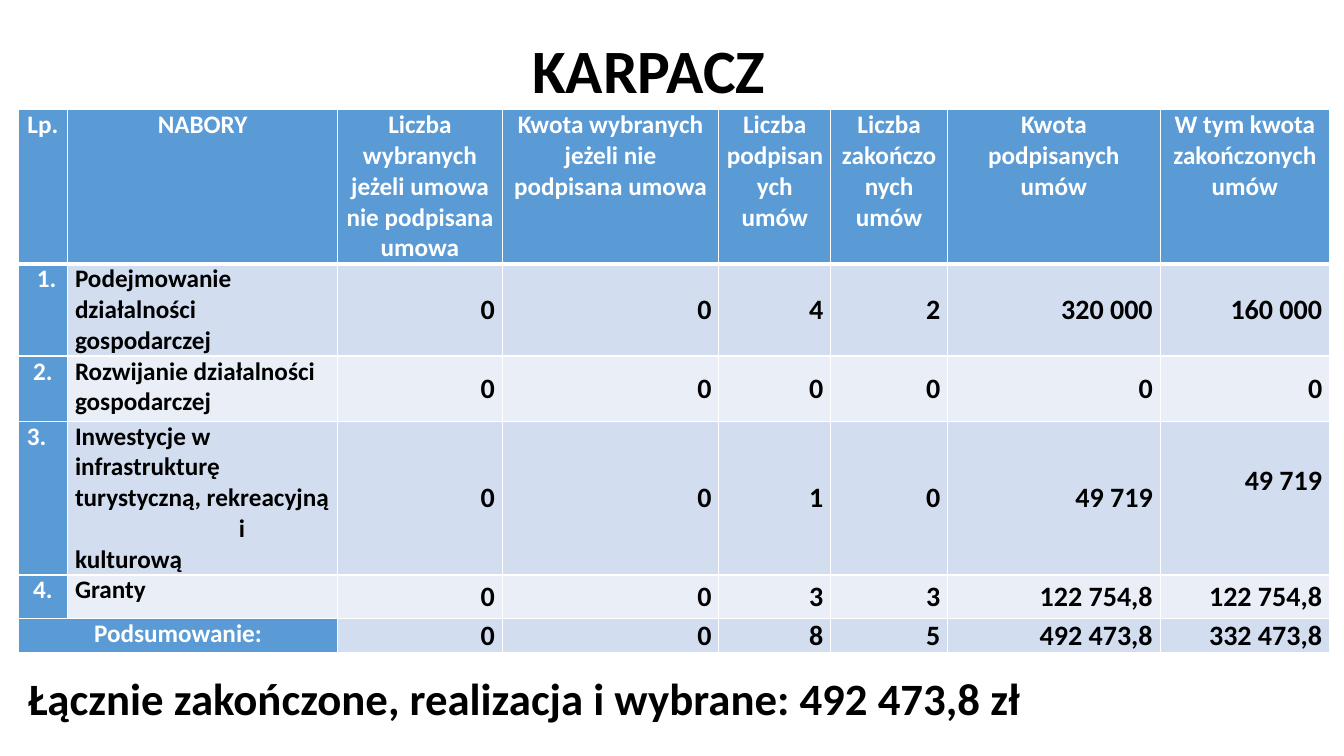
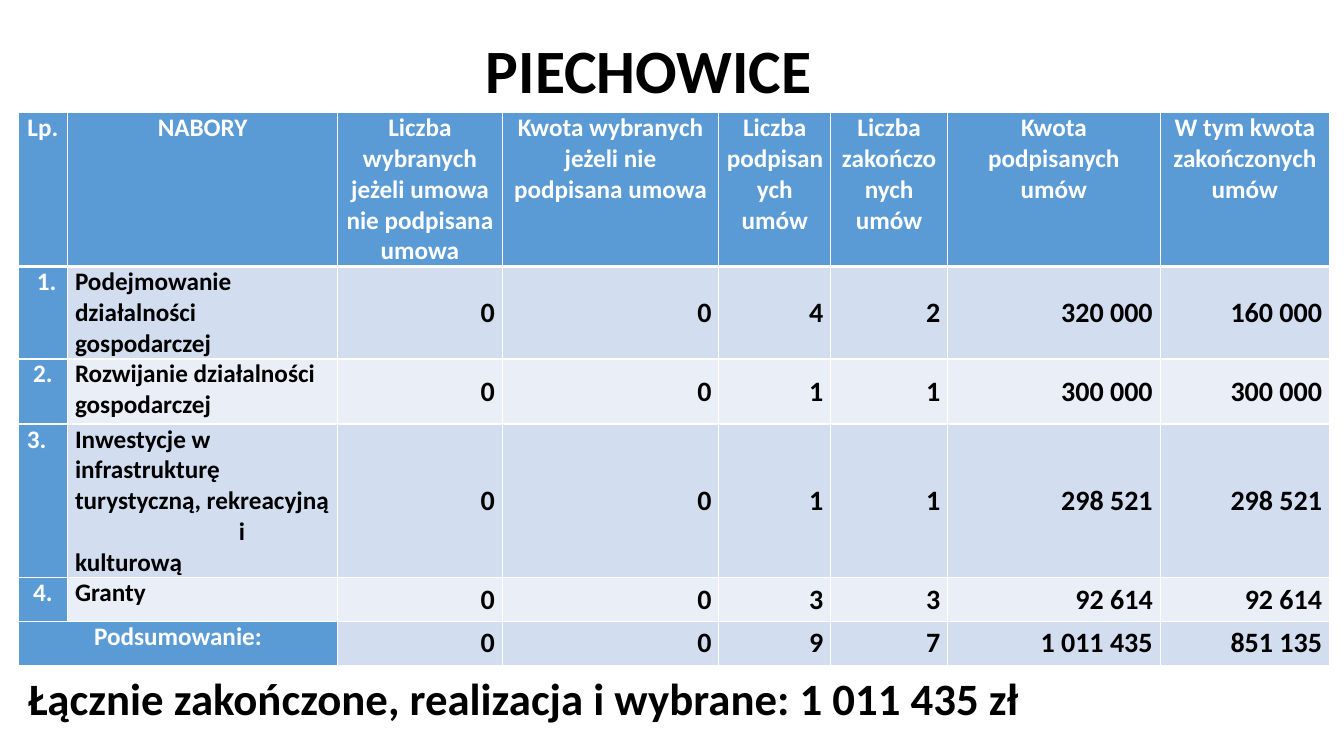
from dataclasses import dataclass
from typing import Optional

from lxml import etree
from pptx import Presentation
from pptx.dml.color import RGBColor
from pptx.enum.text import MSO_ANCHOR, MSO_AUTO_SIZE, PP_ALIGN
from pptx.oxml.ns import qn
from pptx.util import Pt

LEFT, CENTER, RIGHT = PP_ALIGN.LEFT, PP_ALIGN.CENTER, PP_ALIGN.RIGHT
TOP, MIDDLE = MSO_ANCHOR.TOP, MSO_ANCHOR.MIDDLE

FONT = "Calibri"
WHITE, BLACK, BLUE = "FFFFFF", "000000", "5B9BD5"
BANDS = ("D2DEEF", "EAEFF7")

TITLE_ONLY = 5
MARGIN = 13
CELL_INSET = 5.3
COLUMN_WIDTHS = (35.3, 193, 117.4, 154.8, 79.9, 83.5, 151.9, 121)
ROW_HEIGHTS = (88, 62.5, 46.5, 73.5, 31)
HEADINGS = (
    "Lp.",
    "NABORY",
    "Liczba wybranych jeżeli umowa nie podpisana umowa",
    "Kwota wybranych jeżeli nie podpisana umowa",
    "Liczba podpisanych umów",
    "Liczba zakończonych umów",
    "Kwota podpisanych umów",
    "W tym kwota zakończonych umów",
)


@dataclass(frozen=True)
class Call:
    number: str
    name: str
    number_align: PP_ALIGN = CENTER
    number_indent: float = 0
    name_indents: tuple[float, ...] = (0,)


@dataclass(frozen=True)
class Town:
    name: str
    table_top: float
    total_height: float
    amounts: tuple[tuple[str, ...], ...]
    totals: tuple[str, ...]
    raised_row: Optional[int] = None


CALLS = (
    Call("1.", "Podejmowanie działalności gospodarczej", LEFT, 8),
    Call("2.", "Rozwijanie działalności gospodarczej"),
    Call("3.", "Inwestycje w infrastrukturę turystyczną, rekreacyjną\ni\nkulturową",
         LEFT, 1, (0, 117, 0)),
    Call("4.", "Granty"),
)

TOWNS = (
    Town("KARPACZ", 78.5, 21.5, (
        ("0", "0", "4", "2", "320 000", "160 000"),
        ("0", "0", "0", "0", "0", "0"),
        ("0", "0", "1", "0", "49 719", "49 719"),
        ("0", "0", "3", "3", "122 754,8", "122 754,8"),
    ), ("0", "0", "8", "5", "492 473,8", "332 473,8"), raised_row=3),
    Town("PIECHOWICE", 80.6, 31.5, (
        ("0", "0", "4", "2", "320 000", "160 000"),
        ("0", "0", "1", "1", "300 000", "300 000"),
        ("0", "0", "1", "1", "298 521", "298 521"),
        ("0", "0", "3", "3", "92 614", "92 614"),
    ), ("0", "0", "9", "7", "1 011 435", "851 135")),
)


def color(value: str) -> RGBColor:
    return RGBColor.from_string(value)


def write_text(frame, text: str, *, size: float = 18, ink: str = BLACK,
               align: PP_ALIGN = LEFT, indents: tuple[float, ...] = (0,),
               line_spacing: Optional[float] = None) -> None:
    """Write one bold paragraph per line of text, each with its own left indent."""
    for index, (line, indent) in enumerate(zip(text.split("\n"), indents)):
        para = frame.add_paragraph() if index else frame.paragraphs[0]
        para.alignment = align
        if indent:
            para._p.get_or_add_pPr().set("marL", str(Pt(indent)))
        if line_spacing:
            para.line_spacing = line_spacing
        span = para.add_run()
        span.text = line
        span.font.name = FONT
        span.font.size = Pt(size)
        span.font.bold = True
        span.font.color.rgb = color(ink)


def add_borders(cell, *, top: float, bottom: float) -> None:
    properties = cell._tc.get_or_add_tcPr()
    for side, width in (("L", 1), ("R", 1), ("T", top), ("B", bottom)):
        line = etree.SubElement(properties, qn(f"a:ln{side}"), w=str(Pt(width)))
        fill = etree.SubElement(line, qn("a:solidFill"))
        etree.SubElement(fill, qn("a:srgbClr"), val=WHITE)


def fill_cell(cell, text: str, fill: str, *, anchor: MSO_ANCHOR = TOP,
              top: float = 1, bottom: float = 1, **text_format) -> None:
    cell.margin_left = cell.margin_right = Pt(CELL_INSET)
    cell.margin_top = cell.margin_bottom = Pt(0)
    cell.vertical_anchor = anchor
    add_borders(cell, top=top, bottom=bottom)
    cell.fill.solid()
    cell.fill.fore_color.rgb = color(fill)
    write_text(cell.text_frame, text, **text_format)


def add_title(page, text: str) -> None:
    title = page.shapes.title
    title.left, title.top, title.width, title.height = Pt(49.5), Pt(0), Pt(828), Pt(104.4)
    frame = title.text_frame
    frame.auto_size = MSO_AUTO_SIZE.NONE
    frame.vertical_anchor = MIDDLE
    write_text(frame, text, size=44, align=CENTER, line_spacing=0.9)


def add_calls_table(page, town: Town) -> None:
    heights = (*ROW_HEIGHTS, town.total_height)
    table = page.shapes.add_table(
        len(heights), len(COLUMN_WIDTHS), Pt(MARGIN), Pt(town.table_top),
        Pt(sum(COLUMN_WIDTHS)), Pt(sum(heights))).table
    for column, width in zip(table.columns, COLUMN_WIDTHS):
        column.width = Pt(width)
    for row, height in zip(table.rows, heights):
        row.height = Pt(height)

    for index, heading in enumerate(HEADINGS):
        fill_cell(table.cell(0, index), heading, BLUE, bottom=3, ink=WHITE, align=CENTER)

    for row, call in enumerate(CALLS, start=1):
        top = 3 if row == 1 else 1
        fill_cell(table.cell(row, 0), call.number, BLUE, top=top, ink=WHITE,
                  align=call.number_align, indents=(call.number_indent,))
        fill_cell(table.cell(row, 1), call.name, BANDS[(row - 1) % 2], top=top,
                  indents=call.name_indents)

    total_row = len(heights) - 1
    total_label = table.cell(total_row, 0)
    total_label.merge(table.cell(total_row, 1))
    fill_cell(total_label, "Podsumowanie:", BLUE, ink=WHITE, align=CENTER)

    for row, values in enumerate((*town.amounts, town.totals), start=1):
        for column, value in enumerate(values, start=2):
            fill_cell(table.cell(row, column), value, BANDS[(row - 1) % 2], anchor=MIDDLE,
                      top=3 if row == 1 else 1, size=20, align=RIGHT)
    if town.raised_row:
        table.cell(town.raised_row, len(COLUMN_WIDTHS) - 1).margin_bottom = Pt(24)


def add_summary(page, amount: str) -> None:
    box = page.shapes.add_textbox(Pt(MARGIN), Pt(475.2), Pt(738), Pt(46))
    frame = box.text_frame
    frame.word_wrap = False
    frame.auto_size = MSO_AUTO_SIZE.SHAPE_TO_FIT_TEXT
    write_text(frame, f"Łącznie zakończone, realizacja i wybrane: {amount} zł", size=32)


def main() -> None:
    deck = Presentation()
    deck.slide_width, deck.slide_height = Pt(960), Pt(540)
    for town in TOWNS:
        page = deck.slides.add_slide(deck.slide_layouts[TITLE_ONLY])
        add_title(page, town.name)
        add_calls_table(page, town)
        add_summary(page, town.totals[-2])
    deck.save("out.pptx")


if __name__ == "__main__":
    main()
